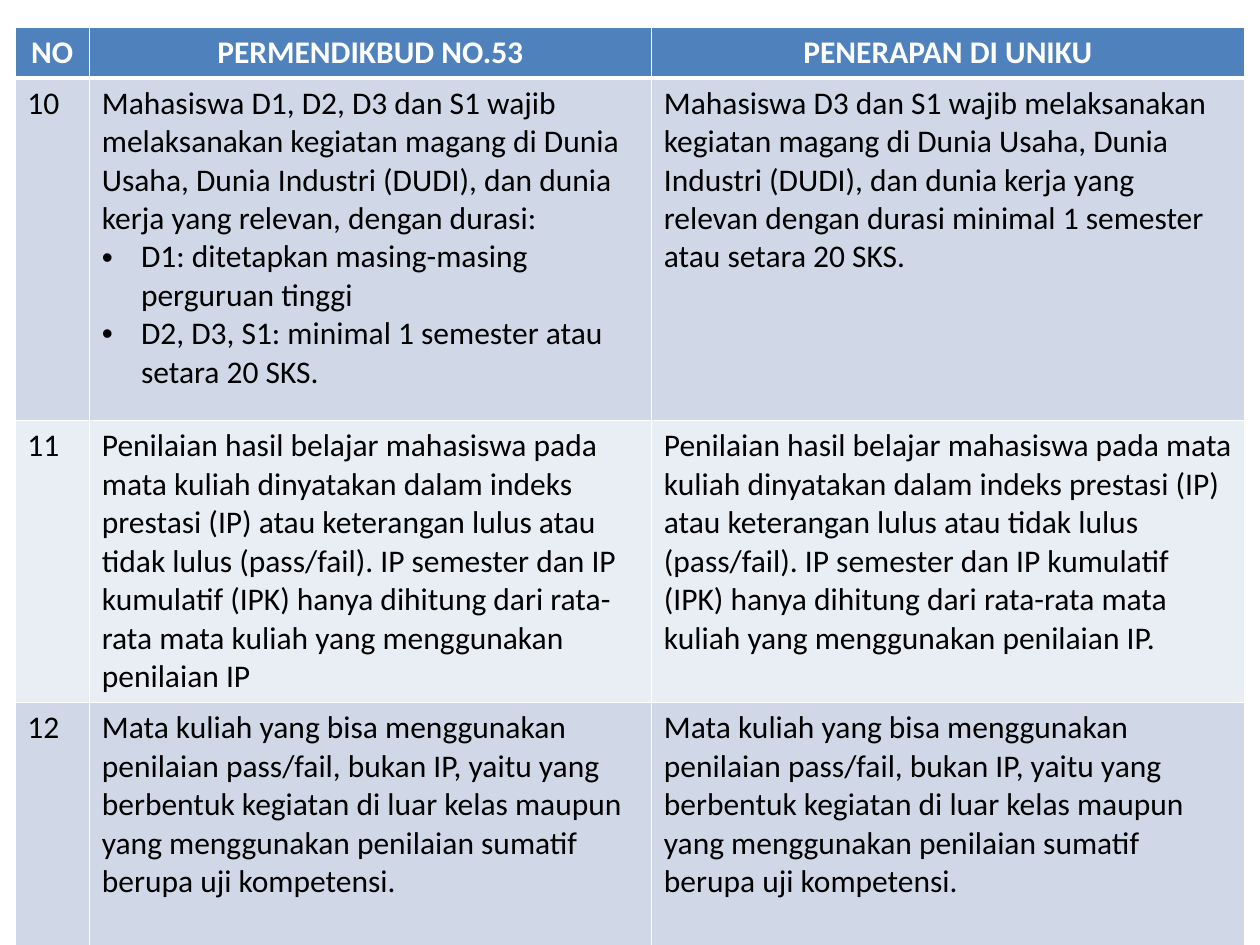
from lxml import etree
from pptx import Presentation, util as u
from pptx.dml.color import RGBColor
from pptx.enum import text
from pptx.oxml import ns

WHITE = RGBColor(0xFF, 0xFF, 0xFF)
BLACK = RGBColor(0, 0, 0)
HEADER_BLUE = RGBColor(0x4F, 0x81, 0xBD)
BANDS = (RGBColor(0xE9, 0xED, 0xF4), RGBColor(0xD0, 0xD8, 0xE8))

COLUMN_WIDTHS = (1.5, 11.33, 11.96)
ROW_HEIGHTS = (0.99, 6.91, 5.67, 4.9)
BULLET_INDENT = u.Cm(0.79)

GRADING = (
    "Penilaian hasil belajar mahasiswa pada mata kuliah dinyatakan dalam indeks "
    "prestasi (IP) atau keterangan lulus atau tidak lulus (pass/fail). IP semester "
    "dan IP kumulatif (IPK) hanya dihitung dari rata-rata mata kuliah yang "
    "menggunakan penilaian IP"
)
PASS_FAIL = (
    "Mata kuliah yang bisa menggunakan penilaian pass/fail, bukan IP, yaitu yang "
    "berbentuk kegiatan di luar kelas maupun yang menggunakan penilaian sumatif "
    "berupa uji kompetensi."
)
INTERNSHIP_RULE = (
    "Mahasiswa D1, D2, D3 dan S1 wajib melaksanakan kegiatan magang di Dunia Usaha, "
    "Dunia Industri (DUDI), dan dunia kerja yang relevan, dengan durasi:\n"
    "• D1: ditetapkan masing-masing perguruan tinggi\n"
    "• D2, D3, S1: minimal 1 semester atau setara 20 SKS."
)
INTERNSHIP_PRACTICE = (
    "Mahasiswa D3 dan S1 wajib melaksanakan kegiatan magang di Dunia Usaha, Dunia "
    "Industri (DUDI), dan dunia kerja yang relevan dengan durasi minimal 1 semester "
    "atau setara 20 SKS."
)
ROWS = (
    ("NO", "PERMENDIKBUD NO.53", "PENERAPAN DI UNIKU"),
    ("10", INTERNSHIP_RULE, INTERNSHIP_PRACTICE),
    ("11", GRADING, GRADING + "."),
    ("12", PASS_FAIL, PASS_FAIL),
)


def add_borders(cell, row_index):
    properties = cell._tc.get_or_add_tcPr()
    thick_side = {0: "lnB", 1: "lnT"}.get(row_index)
    for side in ("lnL", "lnR", "lnT", "lnB"):
        width = u.Pt(3 if side == thick_side else 1)
        line = etree.SubElement(properties, ns.qn(f"a:{side}"), w=str(int(width)))
        fill = etree.SubElement(line, ns.qn("a:solidFill"))
        etree.SubElement(fill, ns.qn("a:srgbClr"), val=str(WHITE))


def add_bullet(para):
    properties = para._p.get_or_add_pPr()
    properties.set("marL", str(int(BULLET_INDENT)))
    properties.set("indent", str(-int(BULLET_INDENT)))
    etree.SubElement(properties, ns.qn("a:buFont"), typeface="Arial")
    etree.SubElement(properties, ns.qn("a:buChar"), char="•")


def fill_cell(cell, content, row_index):
    header = row_index == 0
    add_borders(cell, row_index)
    cell.fill.solid()
    cell.fill.fore_color.rgb = HEADER_BLUE if header else BANDS[row_index % 2]
    lines = content.split("\n")
    cell.text_frame.text = "\n".join(line.removeprefix("• ") for line in lines)
    for para, line in zip(cell.text_frame.paragraphs, lines):
        para.alignment = text.PP_ALIGN.CENTER if header else text.PP_ALIGN.LEFT
        if line.startswith("•"):
            add_bullet(para)
        for span in para.runs:
            span.font.name = "Calibri"
            span.font.size = u.Pt(18)
            span.font.bold = header
            span.font.color.rgb = WHITE if header else BLACK


def add_comparison_table(page, left, top):
    frame = page.shapes.add_table(
        len(ROWS), len(COLUMN_WIDTHS), left, top,
        u.Cm(sum(COLUMN_WIDTHS)), u.Cm(sum(ROW_HEIGHTS)),
    )
    table = frame.table
    for column, width in zip(table.columns, COLUMN_WIDTHS):
        column.width = u.Cm(width)
    for row_index, (row, height) in enumerate(zip(table.rows, ROW_HEIGHTS)):
        row.height = u.Cm(height)
        for cell, content in zip(row.cells, ROWS[row_index]):
            fill_cell(cell, content, row_index)


def main():
    deck = Presentation()
    deck.slide_width, deck.slide_height = u.Cm(25.4), u.Cm(19.05)
    page = deck.slides.add_slide(deck.slide_layouts.get_by_name("Blank"))
    add_comparison_table(page, u.Cm(0.3), u.Cm(0.54))
    deck.save("out.pptx")


if __name__ == "__main__":
    main()
